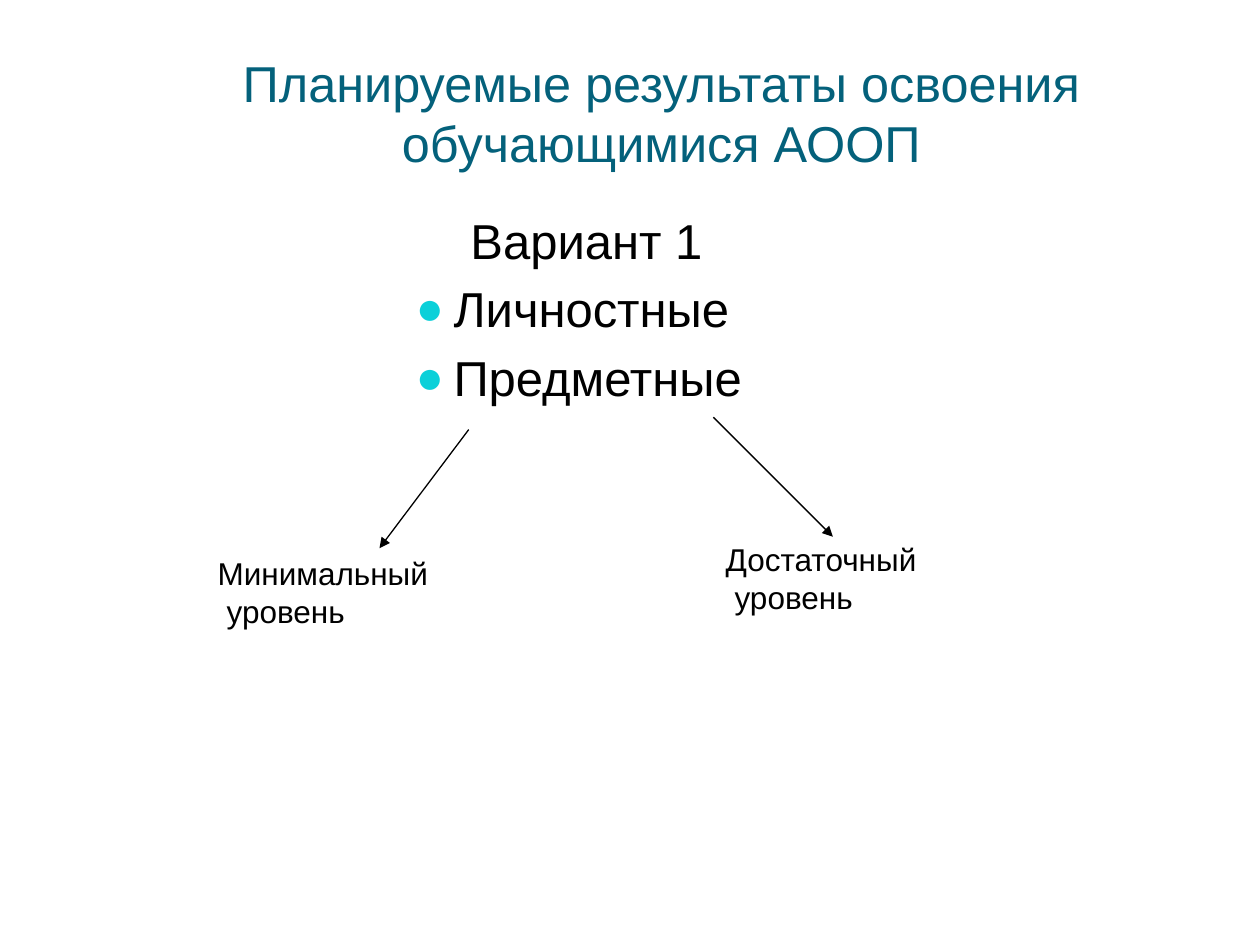
from lxml.etree import SubElement
from pptx import Presentation
from pptx.dml.color import RGBColor
from pptx.enum.shapes import MSO_CONNECTOR
from pptx.enum.text import MSO_ANCHOR, MSO_AUTO_SIZE, PP_ALIGN
from pptx.oxml.ns import qn
from pptx.util import Cm, Pt

HEADING = "Планируемые результаты освоения обучающимися АООП"
VARIANT = "Вариант 1"
RESULTS = ["Личностные", "Предметные"]
LEVELS = [
    {"lines": ["Минимальный", "уровень"], "box": (4.14, 11.05, 5.31, 1.78),
     "arrow": (9.45, 8.66, 7.65, 11.05)},
    {"lines": ["Достаточный", "уровень"], "box": (14.38, 10.77, 5.99, 1.78),
     "arrow": (14.38, 8.41, 16.79, 10.82)},
]
HEADING_BOX = (1.27, 1.27, 24.13, 2.34)
RESULTS_BOX = (8.13, 4.11, 11.86, 12.57)
FONT = "Arial"
BLACK, TEAL, CYAN = "000000", "04617B", "0BD0D9"


def color(hex_code):
    return RGBColor.from_string(hex_code)


def place(part, box):
    part.left, part.top, part.width, part.height = map(Cm, box)


def write(frame, text, size=18, fill=BLACK, align=PP_ALIGN.LEFT,
          margin=0, indent=0, bullet=None):
    first = frame.paragraphs[0]
    paragraph = frame.add_paragraph() if first.runs else first
    paragraph.alignment = align
    run = paragraph.add_run()
    run.text = text
    run.font.name, run.font.size = FONT, Pt(size)
    run.font.color.rgb = color(fill)
    properties = paragraph._p.get_or_add_pPr()
    properties.set("marL", str(Cm(margin)))
    properties.set("indent", str(Cm(indent)))
    if bullet:
        bullet_color = SubElement(properties, qn("a:buClr"))
        SubElement(bullet_color, qn("a:srgbClr"), val=CYAN)
        SubElement(properties, qn("a:buSzPct"), val="95000")
        SubElement(properties, qn("a:buFont"), typeface=FONT)
        SubElement(properties, qn("a:buChar"), char=bullet)
    else:
        SubElement(properties, qn("a:buNone"))


def draw_arrow(slide, ends):
    arrow = slide.shapes.add_connector(MSO_CONNECTOR.STRAIGHT, *map(Cm, ends))
    arrow.line.color.rgb = color(BLACK)
    arrow.line.width = Pt(0.75)
    SubElement(arrow.line._get_or_add_ln(), qn("a:tailEnd"), type="triangle")
    SubElement(arrow._element.spPr, qn("a:effectLst"))


def main():
    deck = Presentation()
    deck.slide_width, deck.slide_height = Cm(25.4), Cm(19.05)
    slide = deck.slides.add_slide(deck.slide_layouts[1])

    heading, results = slide.placeholders
    for part, box, anchor in ((heading, HEADING_BOX, MSO_ANCHOR.BOTTOM),
                              (results, RESULTS_BOX, MSO_ANCHOR.TOP)):
        place(part, box)
        part.text_frame.auto_size = MSO_AUTO_SIZE.NONE
        part.text_frame.vertical_anchor = anchor

    write(heading.text_frame, HEADING, size=28.8, fill=TEAL, align=PP_ALIGN.CENTER)
    write(results.text_frame, VARIANT, size=28, margin=1.1)
    for result in RESULTS:
        write(results.text_frame, result, size=28, margin=0.76, indent=-0.76, bullet="●")

    for level in LEVELS:
        draw_arrow(slide, level["arrow"])
        label = slide.shapes.add_textbox(*map(Cm, level["box"])).text_frame
        label.word_wrap = True
        label.auto_size = MSO_AUTO_SIZE.SHAPE_TO_FIT_TEXT
        for line, margin in zip(level["lines"], (0, 0.18)):
            write(label, line, margin=margin)

    deck.save("out.pptx")


if __name__ == "__main__":
    main()
